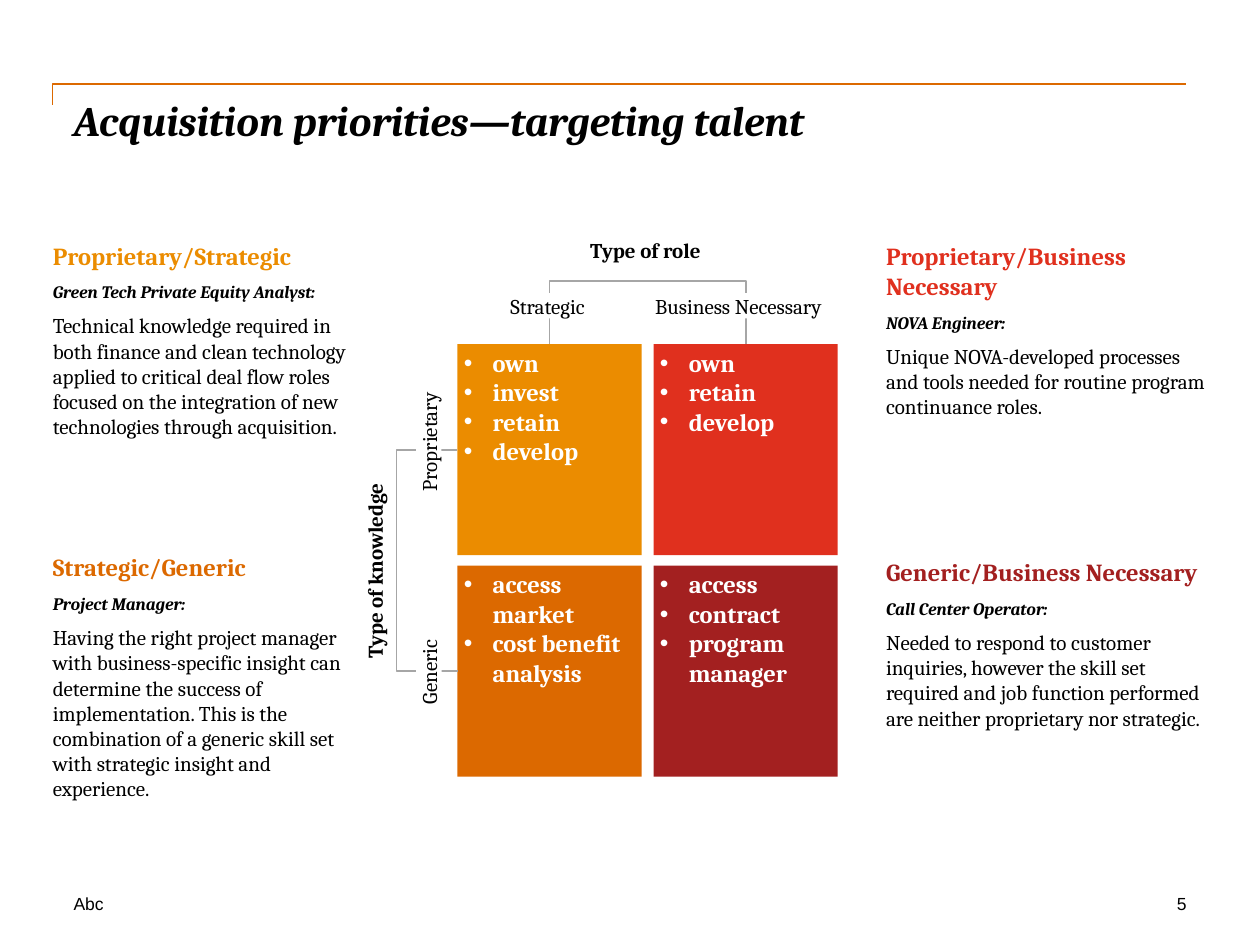
from lxml.etree import SubElement
from pptx import Presentation
from pptx.dml.color import RGBColor
from pptx.enum.shapes import MSO_CONNECTOR as Connector, MSO_SHAPE as Shape
from pptx.enum.text import MSO_ANCHOR as Anchor, PP_ALIGN as Align
from pptx.oxml.ns import qn
from pptx.util import Pt

AMBER = RGBColor(0xEB, 0x8C, 0x00)
ORANGE = RGBColor(0xDC, 0x69, 0x00)
RED = RGBColor(0xE0, 0x30, 0x1E)
MAROON = RGBColor(0xA3, 0x20, 0x20)
GREY = RGBColor(0xA6, 0xA6, 0xA6)
BLACK = RGBColor(0, 0, 0)
WHITE = RGBColor(0xFF, 0xFF, 0xFF)
SERIF, SANS = "Cambria", "Arial"

# Content
TITLE = "Acquisition priorities—targeting talent"
FOOTER, PAGE = "Abc", "5"

# Matrix cells: column, row, colour, bullets
CELLS = [
    (0, 0, AMBER, ["own", "invest", "retain", "develop"]),
    (0, 1, ORANGE, ["access market", "cost benefit analysis"]),
    (1, 0, RED, ["own", "retain", "develop"]),
    (1, 1, MAROON, ["access", "contract", "program manager"]),
]
# Axis labels: text, left, top, width, rotation, bold, wrap
LABELS = [
    ("Type of role", 337.3, 135.5, 108, 0, True, True),
    ("Strategic", 291.7, 167.5, 47.5, 0, False, False),
    ("Business Necessary", 374.4, 167.5, 103.5, 0, False, False),
    ("Type of knowledge", 156.1, 311, 116, 270, True, False),
    ("Generic", 215.3, 365.3, 59.6, 270, False, True),
    ("Proprietary", 196.3, 224.8, 97.5, 270, False, True),
]
# Descriptions: left, top, width, height, colour, space after heading,
# heading, role, body
NOTES = [
    (30.2, 138, 177, 140, AMBER, 6, "Proprietary/Strategic",
     "Green Tech Private Equity Analyst:",
     "Technical knowledge required in both finance and clean technology "
     "applied to critical deal flow roles focused on the integration of new "
     "technologies through acquisition."),
    (30.2, 315.5, 171, 144, ORANGE, 6.7, "Strategic/Generic",
     "Project Manager:",
     "Having the right project manager with business-specific insight can "
     "determine the success of implementation. This is the combination of a "
     "generic skill set with strategic insight and experience."),
    (506.3, 138, 184, 117, RED, 6.7, "Proprietary/Business Necessary",
     "NOVA Engineer:",
     "Unique NOVA-developed processes and tools needed for routine program "
     "continuance roles."),
    (506.3, 318.2, 184, 132, MAROON, 6.7, "Generic/Business Necessary",
     "Call Center Operator:",
     "Needed to respond to customer inquiries, however the skill set required "
     "and job function performed are neither proprietary nor strategic."),
]

# Matrix geometry
CELL_W, CELL_H = 105.2, 120.7
GRID_X, GRID_Y = 261.4, 196.6
PITCH_X, PITCH_Y = 112.1, 126.6
ROLE_REACH, KNOWLEDGE_REACH = 38, 37
SLIVER = 0.18  # span between the level ends of a bracket

presentation = Presentation()
presentation.slide_width, presentation.slide_height = Pt(720), Pt(540)
slide = presentation.slides.add_slide(presentation.slide_layouts[6])


def set_frame(shape, wrap=True, inset_x=0, inset_y=0):
    frame = shape.text_frame
    frame.word_wrap = wrap
    frame.vertical_anchor = Anchor.TOP
    frame.margin_left = frame.margin_right = Pt(inset_x)
    frame.margin_top = frame.margin_bottom = Pt(inset_y)
    return frame


def add_paragraph(frame, text, size, color=BLACK, font=SERIF, bold=False,
                  italic=False, after=0, align=Align.LEFT):
    first = frame.paragraphs[0]
    paragraph = frame.add_paragraph() if first.runs else first
    paragraph.alignment = align
    paragraph.space_after = Pt(after)
    run = paragraph.add_run()
    run.text = text
    run.font.name, run.font.size = font, Pt(size)
    run.font.bold, run.font.italic = bold, italic
    run.font.color.rgb = color
    return paragraph


def add_bullet(paragraph, indent):
    properties = paragraph._p.get_or_add_pPr()
    properties.set("marL", str(Pt(indent)))
    properties.set("indent", str(-Pt(indent)))
    SubElement(properties, qn("a:buFont")).set("typeface", SANS)
    SubElement(properties, qn("a:buChar")).set("char", "•")


def add_text_frame(left, top, width, height):
    box = slide.shapes.add_textbox(Pt(left), Pt(top), Pt(width), Pt(height))
    return set_frame(box)


def add_block(left, top, width, height, color):
    shape = slide.shapes.add_shape(
        Shape.RECTANGLE, Pt(left), Pt(top), Pt(width), Pt(height))
    shape.shadow.inherit = False
    shape.fill.solid()
    shape.fill.fore_color.rgb = color
    shape.line.fill.background()
    return shape


def add_elbow(center_x, center_y, width, height, color, rotation,
              flipped=False, reach=None):
    """Bent line, turned about its centre; reach makes it a bracket."""
    left, top = center_x - width / 2, center_y - height / 2
    elbow = slide.shapes.add_connector(
        Connector.ELBOW, Pt(left), Pt(top), Pt(left + width), Pt(top + height))
    elbow.line.color.rgb = color
    elbow.line.width = Pt(1)
    properties = elbow._element.spPr
    frame = properties.find(qn("a:xfrm"))
    frame.set("rot", str(rotation * 60000))
    if flipped:
        frame.set("flipH", "1")
        frame.set("flipV", "1")
    geometry = properties.find(qn("a:prstGeom"))
    if reach is None:
        geometry.set("prst", "bentConnector2")
    else:
        guide = SubElement(geometry.find(qn("a:avLst")), qn("a:gd"))
        guide.set("name", "adj1")
        guide.set("fmla", f"val {round(reach / width * 100000)}")
    SubElement(properties, qn("a:effectLst"))


# Title, rule and footer
add_elbow(354, 54, 12, 648, ORANGE, 90, flipped=True)
add_paragraph(add_text_frame(42, 54, 636, 72), TITLE, 24, bold=True, italic=True)
add_paragraph(add_text_frame(42, 510.2, 204, 12), FOOTER, 10, font=SANS)
add_paragraph(add_text_frame(558, 510.2, 120, 12), PAGE, 10, font=SANS,
              align=Align.RIGHT)

# Matrix
for column, row, color, bullets in CELLS:
    cell = add_block(GRID_X + column * PITCH_X, GRID_Y + row * PITCH_Y,
                     CELL_W, CELL_H, color)
    frame = set_frame(cell, inset_x=3.6, inset_y=2.2)
    for bullet in bullets:
        add_bullet(add_paragraph(frame, bullet, 14, WHITE, bold=True), 16.5)

# Brackets joining the cell middles
add_elbow(GRID_X + (CELL_W + PITCH_X) / 2, GRID_Y, SLIVER, PITCH_X, GREY, 90,
          flipped=True, reach=ROLE_REACH)
add_elbow(GRID_X, GRID_Y + (CELL_H + PITCH_Y) / 2, SLIVER, PITCH_Y, GREY, 180,
          reach=KNOWLEDGE_REACH)

# Axis labels
for text, left, top, width, rotation, bold, wrap in LABELS:
    label = add_block(left, top, width, 14.5, WHITE)
    label.rotation = rotation
    add_paragraph(set_frame(label, wrap), text, 12, bold=bold, after=6)

# Descriptions
for left, top, width, height, color, gap, heading, role, body in NOTES:
    frame = add_text_frame(left, top, width, height)
    add_paragraph(frame, heading, 14, color, bold=True, after=gap)
    add_paragraph(frame, role, 10, bold=True, italic=True, after=6)
    add_paragraph(frame, body, 12, after=6)

presentation.save("out.pptx")
